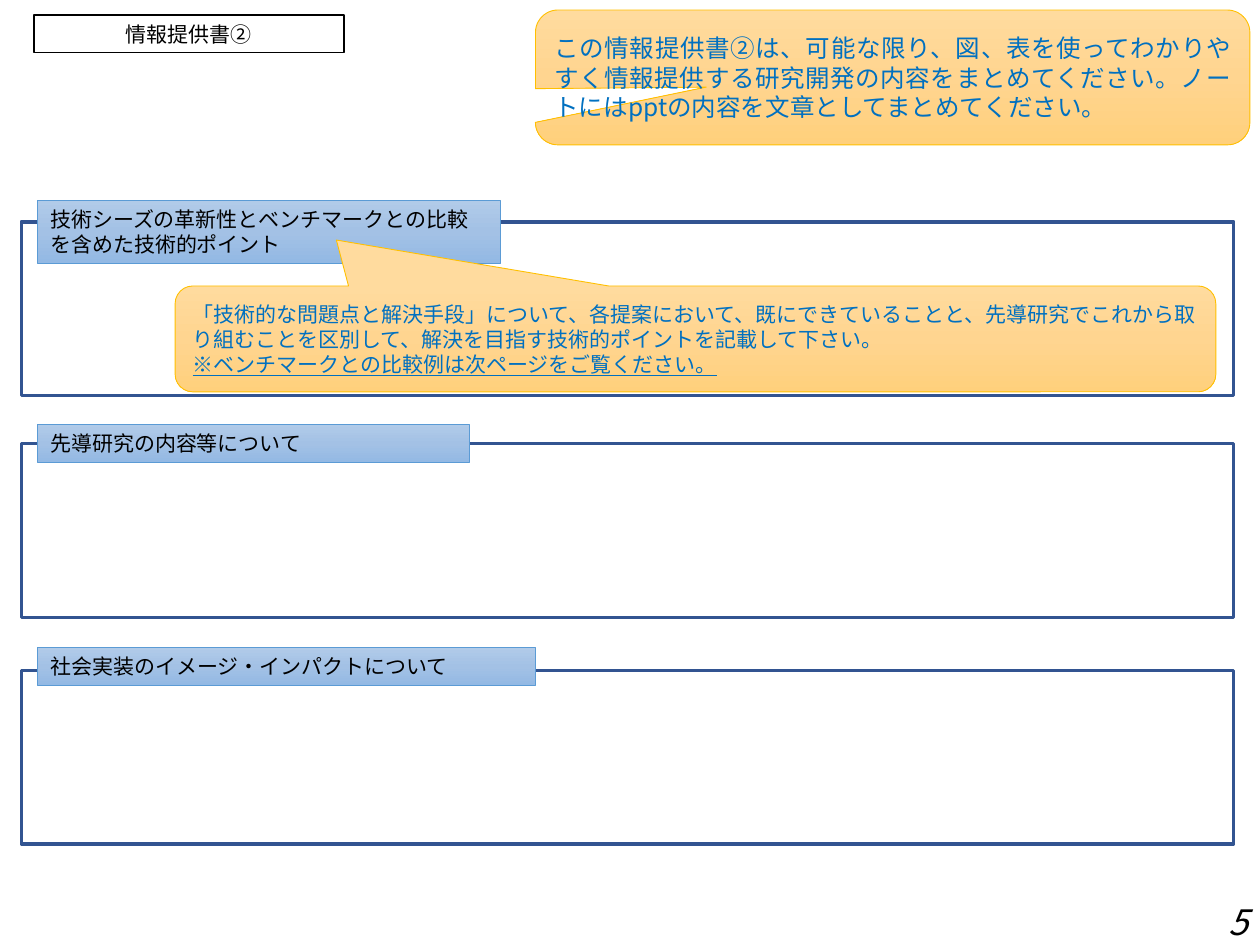
from copy import deepcopy
from lxml import etree
from pptx import Presentation
from pptx.dml.color import RGBColor
from pptx.enum.shapes import MSO_SHAPE
from pptx.enum.text import MSO_ANCHOR, MSO_AUTO_SIZE, PP_ALIGN
from pptx.oxml.ns import qn
from pptx.util import Inches, Pt

RECT, CALLOUT = MSO_SHAPE.RECTANGLE, MSO_SHAPE.ROUNDED_RECTANGULAR_CALLOUT
LEFT, CENTER, JUSTIFY = PP_ALIGN.LEFT, PP_ALIGN.CENTER, PP_ALIGN.JUSTIFY
TOP, MIDDLE = MSO_ANCHOR.TOP, MSO_ANCHOR.MIDDLE
GROW = MSO_AUTO_SIZE.SHAPE_TO_FIT_TEXT
CJK = "Noto Sans CJK JP"
BLUE = ["B1CBE9", "A3C1E5", "93B9E4"]
ORANGE = ["FFDB9E", "FFD590", "FFD07C"]

prs = Presentation()
prs.slide_width, prs.slide_height = Inches(10), Inches(7.5)
s = prs.slides.add_slide(prs.slide_layouts[6])


def add_box(kind, box, line, width, colors=None):
    sp = s.shapes.add_shape(kind, *[Inches(v) for v in box])
    sp.shadow.inherit = False
    sp.line.color.rgb = RGBColor.from_string(line)
    sp.line.width = Pt(width)
    if not colors:
        sp.fill.background()
        return sp
    sp.fill.gradient()
    sp.fill.gradient_angle = 270  # top to bottom
    first = sp._element.spPr.find(".//" + qn("a:gs"))
    middle = deepcopy(first)
    middle.set("pos", "50000")
    first.addnext(middle)
    for stop, color in zip(sp.fill.gradient_stops, colors):
        stop.color.rgb = RGBColor.from_string(color)
    return sp


def add_text(sp, lines, size, color, font=CJK, align=LEFT, anchor=TOP):
    tf = sp.text_frame
    tf.word_wrap = True
    tf.vertical_anchor = anchor
    for i, (text, underline, italic) in enumerate(lines):
        p = tf.paragraphs[0] if i == 0 else tf.add_paragraph()
        p.alignment = align
        r = p.add_run()
        r.text = text
        r.font.size = Pt(size)
        r.font.name = font
        r.font.underline = underline
        r.font.italic = italic
        r.font.color.rgb = RGBColor.from_string(color)
        etree.SubElement(r.font._element, qn("a:ea")).set("typeface", CJK)


# Title box
sp = add_box(RECT, (0.27, 0.12, 2.46, 0.3), "000000", 0.75)
add_text(sp, [("情報提供書②", None, None)], 12, "000000", "Calibri", CENTER)
sp.text_frame.auto_size = GROW

# Framed sections: frame top, label top, label width, label height, font, label
sections = [
    (1.76, 1.59, 3.67, 0.5, CJK, "技術シーズの革新性とベンチマークとの比較を含めた技術的ポイント"),
    (3.52, 3.37, 3.43, 0.3, "Calibri", "先導研究の内容等について"),
    (5.32, 5.14, 3.95, 0.3, "Calibri", "社会実装のイメージ・インパクトについて"),
]
for frame_top, top, width, height, font, label in sections:
    add_box(RECT, (0.17, frame_top, 9.62, 1.38), "325491", 2)
    sp = add_box(RECT, (0.3, top, width, height), "5B9BD5", 0.5, BLUE)
    add_text(sp, [(label, None, None)], 12, "000000", font)
    sp.text_frame.auto_size = GROW

# Instruction callouts: box, tail position, size, alignment, lines
callouts = [
    ((1.39, 2.27, 8.26, 0.84), (-0.345, -0.934), 12, LEFT, [
        ("「技術的な問題点と解決手段」について、各提案において、既にできていることと、"
         "先導研究でこれから取り組むことを区別して、解決を目指す技術的ポイントを記載して下さい。", None, None),
        ("※ベンチマークとの比較例は次ページをご覧ください。", True, None)]),
    ((4.25, 0.08, 5.67, 1.07), (-0.261, 0.072), 14, JUSTIFY, [
        ("この情報提供書②は、可能な限り、図、表を使ってわかりやすく情報提供する研究開発の内容を"
         "まとめてください。ノートにはpptの内容を文章としてまとめてください。", None, None)]),
]
for box, tail, size, align, lines in callouts:
    sp = add_box(CALLOUT, box, "FFC000", 0.5, ORANGE)
    sp.adjustments[0], sp.adjustments[1] = tail
    sp.adjustments[2] = 0.167
    add_text(sp, lines, size, "0070C0", align=align, anchor=MIDDLE)

# Page number
sp = s.shapes.add_textbox(Inches(9.65), Inches(7.1), Inches(0.34), Inches(0.4))
add_text(sp, [("5", None, True)], 20, "000000")

prs.save("out.pptx")
